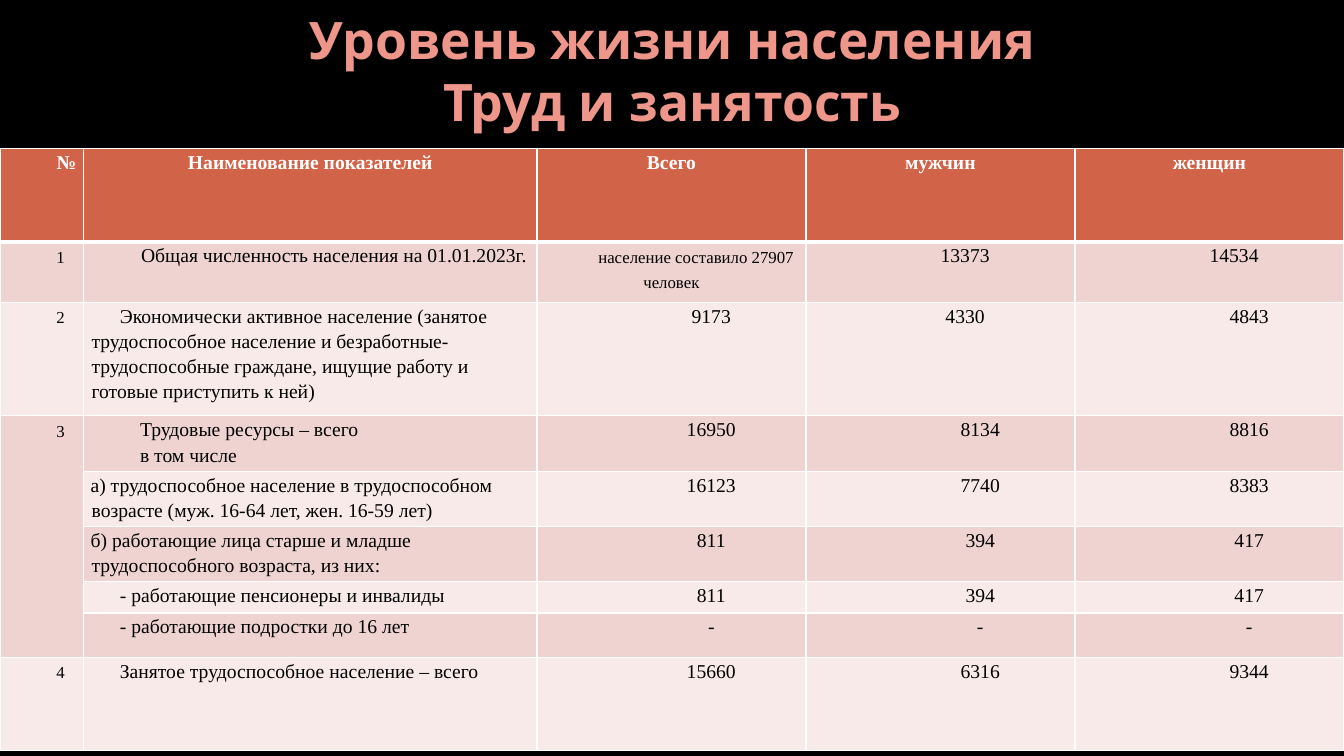
from dataclasses import dataclass

from lxml import etree
from pptx import Presentation
from pptx import util as u
from pptx.dml.color import RGBColor
from pptx.enum import text
from pptx.oxml.ns import qn


@dataclass(frozen=True)
class Theme:
    backdrop: str = "000000"
    title: str = "EE968A"
    header: str = "D16349"
    bands: tuple = ("EED3D0", "F7EAE9")
    light: str = "FFFFFF"
    dark: str = "000000"
    title_font: str = "Open Sans"
    body_font: str = "Times New Roman"
    title_size: float = 36.9
    body_size: float = 14
    small_size: float = 12


THEME = Theme()
CENTER, LEFT = text.PP_ALIGN.CENTER, text.PP_ALIGN.LEFT

COLUMNS = (0.83, 4.5, 2.67, 2.67, 2.67)
HEADINGS = ("№", "Наименование показателей", "Всего", "мужчин", "женщин")
HEADER_HEIGHT = 0.93
HEADER_INDENTS = ((0, 0.49), (0.01, -0.01)) + ((0.3, -0.3),) * 3

# Paragraph indents: left margin, first line
WIDE, STEP, FLUSH = (0, 0.49), (0.01, 0.28), (0.01, -0.01)
SHIFTED = (0.3, 0.49)

# Height, number, label, label indent, values
ROWS = (
    (0.6, "1", "Общая численность населения на 01.01.2023г.", (0.01, 0.49),
     ("население составило 27907 человек", "13373", "14534")),
    (1.13, "2", "Экономически активное население (занятое трудоспособное население "
     "и безработные-трудоспособные граждане, ищущие работу и готовые приступить к ней)",
     STEP, ("9173", "4330", "4843")),
    (0.55, "3", "Трудовые ресурсы – всего\nв том числе", WIDE, ("16950", "8134", "8816")),
    (0.55, "", "а) трудоспособное население в трудоспособном возрасте "
     "(муж. 16-64 лет, жен. 16-59 лет)", FLUSH, ("16123", "7740", "8383")),
    (0.55, "", "б) работающие лица старше и младше трудоспособного возраста, из них:",
     FLUSH, ("811", "394", "417")),
    (0.31, "", "- работающие пенсионеры и инвалиды", STEP, ("811", "394", "417")),
    (0.44, "", "- работающие подростки до 16 лет", STEP, ("-", "-", "-")),
    (0.93, "4", "Занятое трудоспособное население – всего", STEP,
     ("15660", "6316", "9344")),
)
RESOURCE_ROWS = (3, 7)
# Cells whose centred text has no left margin
UNSHIFTED = {(1, 2), (1, 3), (1, 4), (2, 3)}


def write(frame, words, *, size=THEME.body_size, color=THEME.dark, font=THEME.body_font,
          bold=False, align=LEFT, indent=(0, 0), spacing=None):
    for number, line in enumerate(words.split("\n")):
        para = frame.add_paragraph() if number else frame.paragraphs[0]
        para.alignment = align
        if spacing:
            para.line_spacing = u.Pt(spacing)
        settings = para._p.get_or_add_pPr()
        settings.set("marL", str(u.Inches(indent[0])))
        settings.set("indent", str(u.Inches(indent[1])))
        span = para.add_run()
        span.text = line
        span.font.name, span.font.size, span.font.bold = font, u.Pt(size), bold
        span.font.color.rgb = RGBColor.from_string(color)


def style_cell(cell, fill, top=1, bottom=1):
    # Borders come before the fill
    settings = cell._tc.get_or_add_tcPr()
    for side, width in (("L", 1), ("R", 1), ("T", top), ("B", bottom)):
        border = etree.SubElement(settings, qn(f"a:ln{side}"), w=str(u.Pt(width)))
        solid = etree.SubElement(border, qn("a:solidFill"))
        etree.SubElement(solid, qn("a:srgbClr"), val=THEME.light)
    cell.fill.solid()
    cell.fill.fore_color.rgb = RGBColor.from_string(fill)
    cell.margin_left = cell.margin_right = u.Inches(0.07)
    cell.margin_top = cell.margin_bottom = 0


def add_title(page, left, top, width, height):
    box = page.shapes.add_textbox(*map(u.Inches, (left, top, width, height)))
    frame = box.text_frame
    frame.word_wrap = True
    frame.margin_top = frame.margin_bottom = 0
    frame.vertical_anchor = text.MSO_ANCHOR.MIDDLE
    write(frame, "Уровень жизни населения\nТруд и занятость", size=THEME.title_size,
          color=THEME.title, font=THEME.title_font, bold=True, align=CENTER)


def add_labour_table(page, left, top, width, height):
    table = page.shapes.add_table(len(ROWS) + 1, len(COLUMNS),
                                  *map(u.Inches, (left, top, width, height))).table
    for column, share in zip(table.columns, COLUMNS):
        column.width = u.Inches(width * share / sum(COLUMNS))
    heights = [HEADER_HEIGHT] + [row[0] for row in ROWS]
    for row, share in zip(table.rows, heights):
        row.height = u.Inches(height * share / sum(heights))

    # Header
    for column, (heading, indent) in enumerate(zip(HEADINGS, HEADER_INDENTS)):
        cell = table.cell(0, column)
        style_cell(cell, THEME.header, bottom=3)
        write(cell.text_frame, heading, color=THEME.light, bold=True,
              align=CENTER, indent=indent, spacing=18)

    # Body
    for index, (_, number, label, label_indent, values) in enumerate(ROWS, 1):
        for column, words in enumerate((number, label, *values)):
            cell = table.cell(index, column)
            style_cell(cell, THEME.bands[(index - 1) % 2], top=3 if index == 1 else 1)
            if not words:
                continue
            if column == 0:
                indent = WIDE
            elif column == 1:
                indent = label_indent
            else:
                indent = WIDE if (index, column) in UNSHIFTED else SHIFTED
            small = column == 0 or (index, column) == (1, 2)
            write(cell.text_frame, words, indent=indent, spacing=18,
                  size=THEME.small_size if small else THEME.body_size,
                  align=CENTER if column > 1 else LEFT)

    first, last = RESOURCE_ROWS
    table.cell(first, 0).merge(table.cell(last, 0))


def main():
    deck = Presentation()
    deck.slide_width, deck.slide_height = u.Inches(13.33), u.Inches(7.5)
    page = deck.slides.add_slide(deck.slide_layouts[6])
    page.background.fill.solid()
    page.background.fill.fore_color.rgb = RGBColor.from_string(THEME.backdrop)
    add_title(page, 0.67, 0.14, 12, 1.11)
    add_labour_table(page, 0, 1.47, 13.33, 5.98)
    deck.save("out.pptx")


if __name__ == "__main__":
    main()
